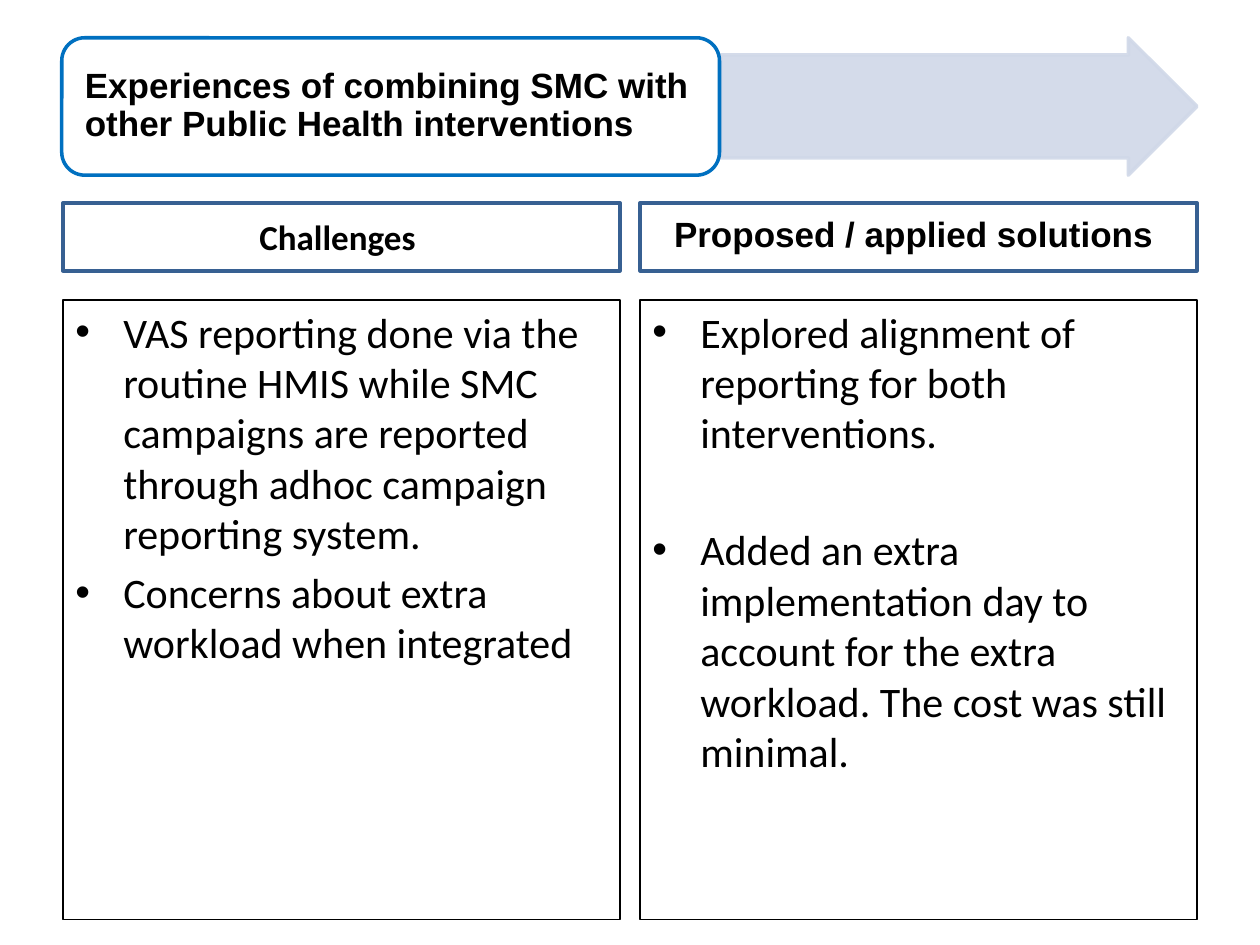
from dataclasses import dataclass

from lxml import etree
from pptx import Presentation
from pptx.dml.color import RGBColor
from pptx.enum.shapes import MSO_SHAPE
from pptx.enum.text import MSO_ANCHOR, PP_ALIGN
from pptx.oxml.ns import qn
from pptx.util import Inches, Pt

RECTANGLE = MSO_SHAPE.RECTANGLE
ROUNDED = MSO_SHAPE.ROUNDED_RECTANGLE
ARROW = MSO_SHAPE.RIGHT_ARROW
TOP, MIDDLE, BOTTOM = MSO_ANCHOR.TOP, MSO_ANCHOR.MIDDLE, MSO_ANCHOR.BOTTOM
LEFT, CENTER = PP_ALIGN.LEFT, PP_ALIGN.CENTER


@dataclass(frozen=True)
class Theme:
    ink: str = "000000"
    paper: str = "FFFFFF"
    arrow: str = "D0D8E8"
    banner: str = "0070C0"
    heading: str = "376092"
    heading_size: int = 20
    body_size: int = 24
    heading_font: str = "Arial"
    body_font: str = "Calibri"


THEME = Theme()
WIDTH, HEIGHT = 10, 7.5
MARGIN, GUTTER = 0.5, 0.16
COLUMN = (WIDTH - 2 * MARGIN - GUTTER) / 2
BANNER_ROW = (0.3, 1.09)
HEADING_ROW = (1.61, 0.54)
BODY_ROW = (2.38, 4.92)
BANNER_WIDTH = 5.22
HANG = 0.38
BULLET_GAP = 4.8
WIDE_GAP = 38

COLUMNS = [
    {
        "heading": "Challenges ",
        "font": THEME.body_font,
        "frame": {"vertical_anchor": MIDDLE},
        "bullets": [
            ("VAS reporting done via the routine HMIS while SMC campaigns are "
             "reported through adhoc campaign reporting system.", 0),
            ("Concerns about extra workload when integrated", BULLET_GAP),
        ],
    },
    {
        "heading": "Proposed / applied solutions ",
        "font": THEME.heading_font,
        "frame": {"vertical_anchor": BOTTOM, "margin_bottom": Inches(0.13)},
        "bullets": [
            ("Explored alignment of reporting for both interventions.", 0),
            ("Added an extra implementation day to account for the extra "
             "workload. The cost was still minimal.", WIDE_GAP),
        ],
    },
]


def apply(target, values):
    for name, value in values.items():
        setattr(target, name, value)


def add_box(page, kind, left, row, width, fill, line, weight):
    top, height = row
    box = page.shapes.add_shape(
        kind, Inches(left), Inches(top), Inches(width), Inches(height))
    box.shadow.inherit = False
    if fill:
        box.fill.solid()
        box.fill.fore_color.rgb = RGBColor.from_string(fill)
    else:
        box.fill.background()
    box.line.color.rgb = RGBColor.from_string(line)
    box.line.width = Pt(weight)
    return box


def set_opacity(box, percent):
    for color in box.fill._xPr.iter(qn("a:srgbClr")):
        etree.SubElement(color, qn("a:alpha"), val=str(percent * 1000))


def write_para(para, text, font, size, bold=False, **layout):
    apply(para, layout)
    span = para.add_run()
    span.text = text
    apply(span.font, {"name": font, "size": Pt(size), "bold": bold})
    span.font.color.rgb = RGBColor.from_string(THEME.ink)


def add_bullet(para):
    properties = para._p.get_or_add_pPr()
    properties.set("marL", str(Inches(HANG)))
    properties.set("indent", str(-Inches(HANG)))
    etree.SubElement(properties, qn("a:buFont"), typeface="Arial")
    etree.SubElement(properties, qn("a:buChar"), char="•")


def add_banner(page):
    arrow = add_box(page, ARROW, MARGIN + BANNER_WIDTH, BANNER_ROW,
                    WIDTH - 2 * MARGIN - BANNER_WIDTH,
                    THEME.arrow, THEME.arrow, 2)
    arrow.adjustments[0] = 0.75
    set_opacity(arrow, 90)
    box = add_box(page, ROUNDED, MARGIN - 0.01, BANNER_ROW, BANNER_WIDTH,
                  THEME.paper, THEME.banner, 2)
    apply(box.text_frame, {
        "word_wrap": True, "vertical_anchor": MIDDLE,
        "margin_left": Inches(0.13), "margin_right": Inches(0.13)})
    write_para(box.text_frame.paragraphs[0],
               "Experiences of combining SMC with other Public Health interventions",
               THEME.heading_font, THEME.heading_size, True,
               alignment=LEFT, line_spacing=0.9)


def add_heading(page, left, column):
    box = add_box(page, RECTANGLE, left, HEADING_ROW, COLUMN,
                  THEME.paper, THEME.heading, 2)
    apply(box.text_frame, {"word_wrap": True, **column["frame"]})
    write_para(box.text_frame.paragraphs[0], column["heading"],
               column["font"], THEME.heading_size, True, alignment=CENTER)


def add_bullet_list(page, left, bullets):
    box = add_box(page, RECTANGLE, left, BODY_ROW, COLUMN,
                  None, THEME.ink, 0.75)
    frame = box.text_frame
    apply(frame, {"word_wrap": True, "vertical_anchor": TOP})
    for index, (text, gap) in enumerate(bullets):
        para = frame.add_paragraph() if index else frame.paragraphs[0]
        write_para(para, text, THEME.body_font, THEME.body_size,
                   alignment=LEFT, space_before=Pt(gap))
        add_bullet(para)


def main():
    deck = Presentation()
    apply(deck, {"slide_width": Inches(WIDTH), "slide_height": Inches(HEIGHT)})
    page = deck.slides.add_slide(deck.slide_layouts[6])
    add_banner(page)
    for index, column in enumerate(COLUMNS):
        left = MARGIN + index * (COLUMN + GUTTER)
        add_heading(page, left, column)
        add_bullet_list(page, left, column["bullets"])
    deck.save("out.pptx")


if __name__ == "__main__":
    main()
